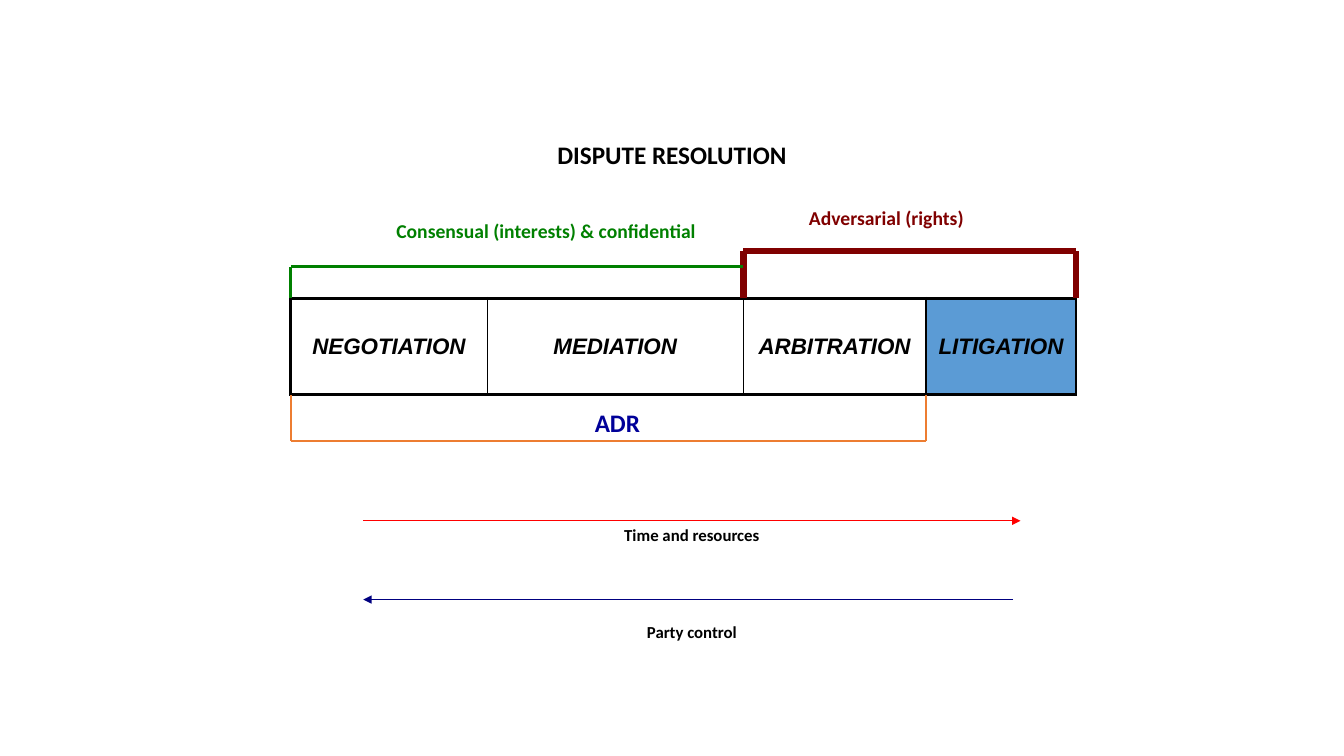
from itertools import accumulate
from pptx import Presentation, util as u
from pptx.dml.color import RGBColor
from pptx.enum import shapes, text
from pptx.oxml import parse_xml
from pptx.oxml.ns import nsdecls, qn
from lxml import etree

PX = 9525
BLACK = RGBColor(0, 0, 0)
RED = RGBColor(0xFF, 0, 0)
NAVY = RGBColor(0, 0, 0x80)
MAROON = RGBColor(0x80, 0, 0)
GREEN = RGBColor(0, 0x80, 0)
ORANGE = RGBColor(0xED, 0x7D, 0x31)
BLUE = RGBColor(0, 0, 0x99)
SKY = RGBColor(0x5B, 0x9B, 0xD5)
LEFT, CENTER = text.PP_ALIGN.LEFT, text.PP_ALIGN.CENTER
MIDDLE = text.MSO_ANCHOR.MIDDLE
STAGES = ["NEGOTIATION", "MEDIATION", "ARBITRATION", "LITIGATION"]
WIDTHS = [187, 244, 174, 143]


def px(*vals):
    return [u.Emu(v * PX) for v in vals]


def write(frame, words, size=12, color=BLACK, font="Calibri", align=CENTER, italic=False):
    par = frame.paragraphs[0]
    par.alignment = align
    run = par.add_run()
    run.text = words
    face = run.font
    face.name, face.size, face.bold, face.italic = font, u.Pt(size), True, italic
    face.color.rgb = color


def label(slide, box, words, wrap=True, **style):
    frame = slide.shapes.add_textbox(*px(*box)).text_frame
    frame.word_wrap = wrap
    write(frame, words, **style)


def line(slide, start, end, color, width, arrow=False):
    link = slide.shapes.add_connector(
        shapes.MSO_CONNECTOR.STRAIGHT, *px(*start, *end))
    link.line.color.rgb = color
    link.line.width = u.Pt(width)
    props = link._element.spPr
    if arrow:
        etree.SubElement(props.find(qn("a:ln")), qn("a:tailEnd"), type="triangle")
    etree.SubElement(props, qn("a:effectLst"))


def title(slide, box):
    head = slide.shapes.title
    head.left, head.top, head.width, head.height = px(*box)
    frame = head.text_frame
    frame.auto_size = text.MSO_AUTO_SIZE.NONE
    frame.vertical_anchor = MIDDLE
    write(frame, "DISPUTE RESOLUTION", size=18)


def border(cell, sides):
    props = cell._tc.get_or_add_tcPr()
    for spot, (side, width) in enumerate(sides.items()):
        props.insert(spot, parse_xml(
            f'<a:ln{side} {nsdecls("a")} w="{u.Pt(width)}"><a:solidFill>'
            f'<a:srgbClr val="{BLACK}"/></a:solidFill></a:ln{side}>'))


def stages(slide, box):
    table = slide.shapes.add_table(1, len(STAGES), *px(*box)).table
    table.first_row = table.horz_banding = False
    table.rows[0].height = px(box[3])[0]
    last = len(STAGES) - 1
    for i, (name, width) in enumerate(zip(STAGES, WIDTHS)):
        table.columns[i].width = px(width)[0]
        cell = table.cell(0, i)
        cell.vertical_anchor = MIDDLE
        write(cell.text_frame, name, size=16, font="Arial", italic=True)
        if i == last:
            cell.fill.solid()
            cell.fill.fore_color.rgb = SKY
        else:
            cell.fill.background()
        border(cell, {"L": 1 if i else 2.25, "R": 2.25 if i == last else 1,
                      "T": 2.25, "B": 2.25})


def bracket(slide, left, right, base, rail, color, width, legs):
    for x in legs:
        line(slide, (x, base), (x, rail), color, width)
    line(slide, (left, rail), (right, rail), color, width)


def groups(slide, box):
    left, top, _, high = box
    edges = list(accumulate(WIDTHS, initial=left))
    mid, adr, right = edges[2:]
    base = top + high
    bracket(slide, mid, right, top, top - 45, MAROON, 4.5, (mid, right))
    bracket(slide, left, mid, top, top - 30, GREEN, 2.25, (left,))
    bracket(slide, left, adr, base, base + 44, ORANGE, 1.5, (left, adr))
    label(slide, (left + 91, top - 80, 318, 33),
          "Consensual (interests) & confidential", size=14, color=GREEN, align=LEFT)
    label(slide, (mid + 53, top - 93, 168, 33), "Adversarial (rights)",
          wrap=False, size=14, color=MAROON, align=LEFT)
    label(slide, (left + 280, base + 7, 63, 38), "ADR",
          wrap=False, size=18, color=BLUE, align=LEFT)


def trends(slide, box):
    left, top, wide, high = box
    right, base = left + wide, top + high
    line(slide, (left, top), (right, top), RED, 0.75, arrow=True)
    line(slide, (right - 7, base), (left, base), NAVY, 0.75, arrow=True)
    for y, words in ((top - 1, "Time and resources"), (base + 16, "Party control")):
        label(slide, (left - 23, y, 672, 28), words)


def main():
    deck = Presentation()
    deck.slide_width, deck.slide_height = px(1280, 720)
    slide = deck.slides.add_slide(deck.slide_layouts[5])
    grid = (277, 284, sum(WIDTHS), 92)
    title(slide, (232, 129, 816, 36))
    trends(slide, (346, 496, 626, 75))
    stages(slide, grid)
    groups(slide, grid)
    deck.save("out.pptx")


if __name__ == "__main__":
    main()
